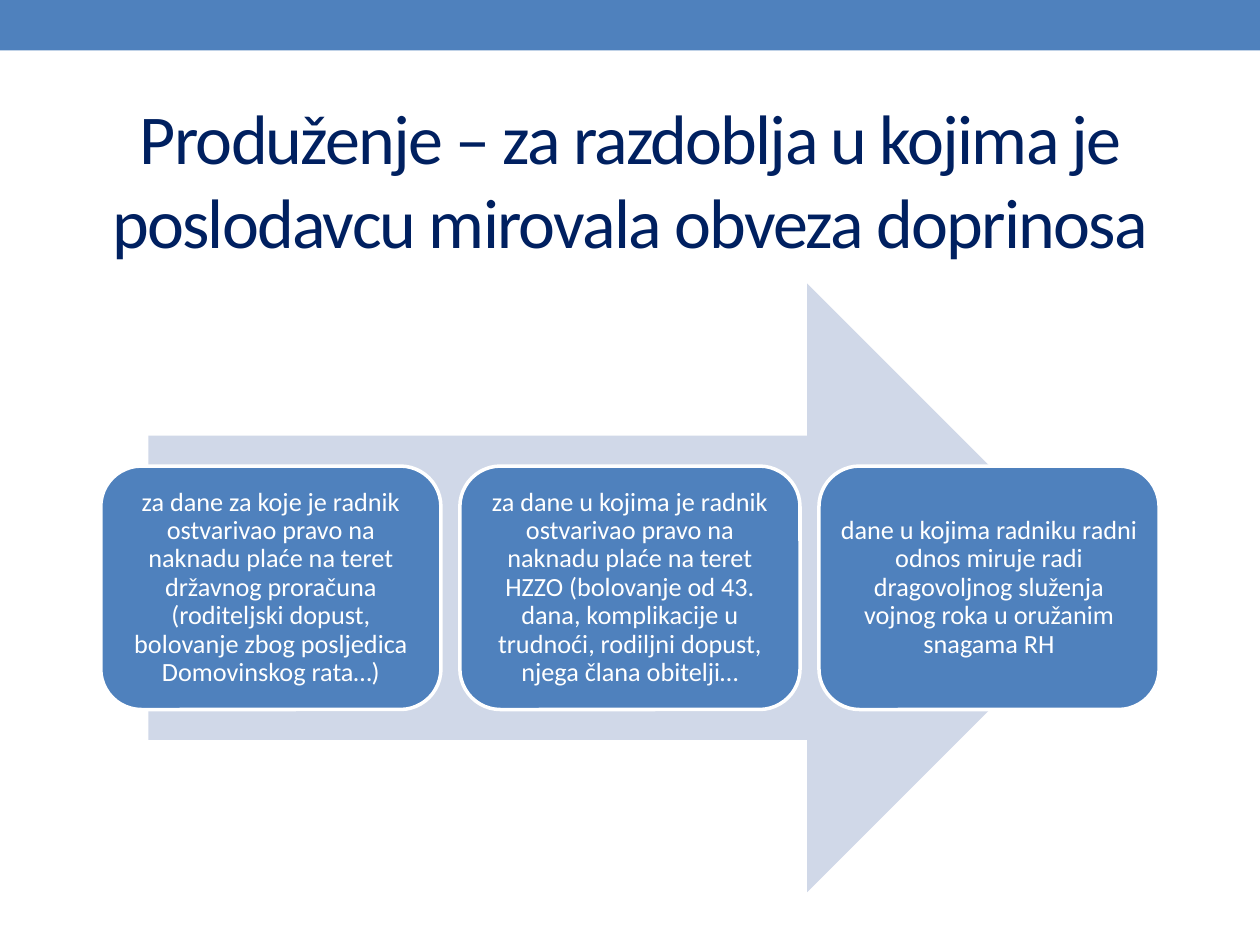
from pptx import Presentation
from pptx.dml.color import RGBColor
from pptx.enum import shapes, text
from pptx.util import Pt

COLORS = {"blue": "4F81BD", "pale": "D0D8E8", "navy": "002060", "white": "FFFFFF"}
FONT = "Calibri"
TITLE = "Produženje – za razdoblja u kojima je poslodavcu mirovala obveza doprinosa"
PERIODS = [
    "za dane za koje je radnik ostvarivao pravo na naknadu plaće na teret državnog "
    "proračuna (roditeljski dopust, bolovanje zbog posljedica Domovinskog rata…)",
    "za dane u kojima je radnik ostvarivao pravo na naknadu plaće na teret HZZO "
    "(bolovanje od 43. dana, komplikacije u trudnoći, rodiljni dopust, njega člana obitelji…",
    "dane u kojima radniku radni odnos miruje radi dragovoljnog služenja vojnog roka "
    "u oružanim snagama RH",
]


def rgb(name):
    return RGBColor.from_string(COLORS[name])


def add_block(parent, kind, box, fill):
    """Add a filled preset shape without outline or shadow."""
    sp = parent.add_shape(kind, *map(Pt, box))
    sp.shadow.inherit = False
    sp.fill.solid()
    sp.fill.fore_color.rgb = rgb(fill)
    sp.line.fill.background()
    return sp


def set_text(sp, words, size, color):
    """Write one centred paragraph and return it."""
    tf = sp.text_frame
    tf.word_wrap = True
    tf.vertical_anchor = text.MSO_ANCHOR.MIDDLE
    p = tf.paragraphs[0]
    p.text = words
    p.alignment = text.PP_ALIGN.CENTER
    font = p.runs[0].font
    font.name, font.size, font.color.rgb = FONT, Pt(size), rgb(color)
    return p


def add_title(slide, box):
    sp = slide.shapes.add_textbox(*map(Pt, box))
    p = set_text(sp, TITLE, 40, "navy")
    p.runs[0].font._element.set("spc", "-100")


def add_process(slide, box):
    """Draw a wide arrow behind a row of equal rounded cards."""
    left, top, width, height = box
    group = slide.shapes.add_group_shape().shapes
    arrow_w = width * 0.91
    add_block(group, shapes.MSO_SHAPE.RIGHT_ARROW,
              (left + (width - arrow_w) / 2, top, arrow_w, height), "pale")

    gap = 10.8
    card_w = (width - gap * (len(PERIODS) - 1)) / len(PERIODS)
    card_h = height * 0.4
    for i, words in enumerate(PERIODS):
        card = (left + i * (card_w + gap), top + (height - card_h) / 2, card_w, card_h)
        sp = add_block(group, shapes.MSO_SHAPE.ROUNDED_RECTANGLE, card, "blue")
        sp.line.color.rgb = rgb("white")
        sp.line.width = Pt(2)
        tf = sp.text_frame
        tf.margin_left = tf.margin_right = tf.margin_top = tf.margin_bottom = Pt(4.5)
        set_text(sp, words, 15, "white").line_spacing = 0.9


def main():
    prs = Presentation()
    prs.slide_width, prs.slide_height = Pt(720), Pt(540)
    slide = prs.slides.add_slide(prs.slide_layouts[6])
    add_block(slide.shapes, shapes.MSO_SHAPE.RECTANGLE, (0, 0, 720, 28.8), "blue")
    add_title(slide, (36, 42, 648, 120))
    add_process(slide, (57.6, 162, 604.8, 347.8))
    prs.save("out.pptx")


if __name__ == "__main__":
    main()
